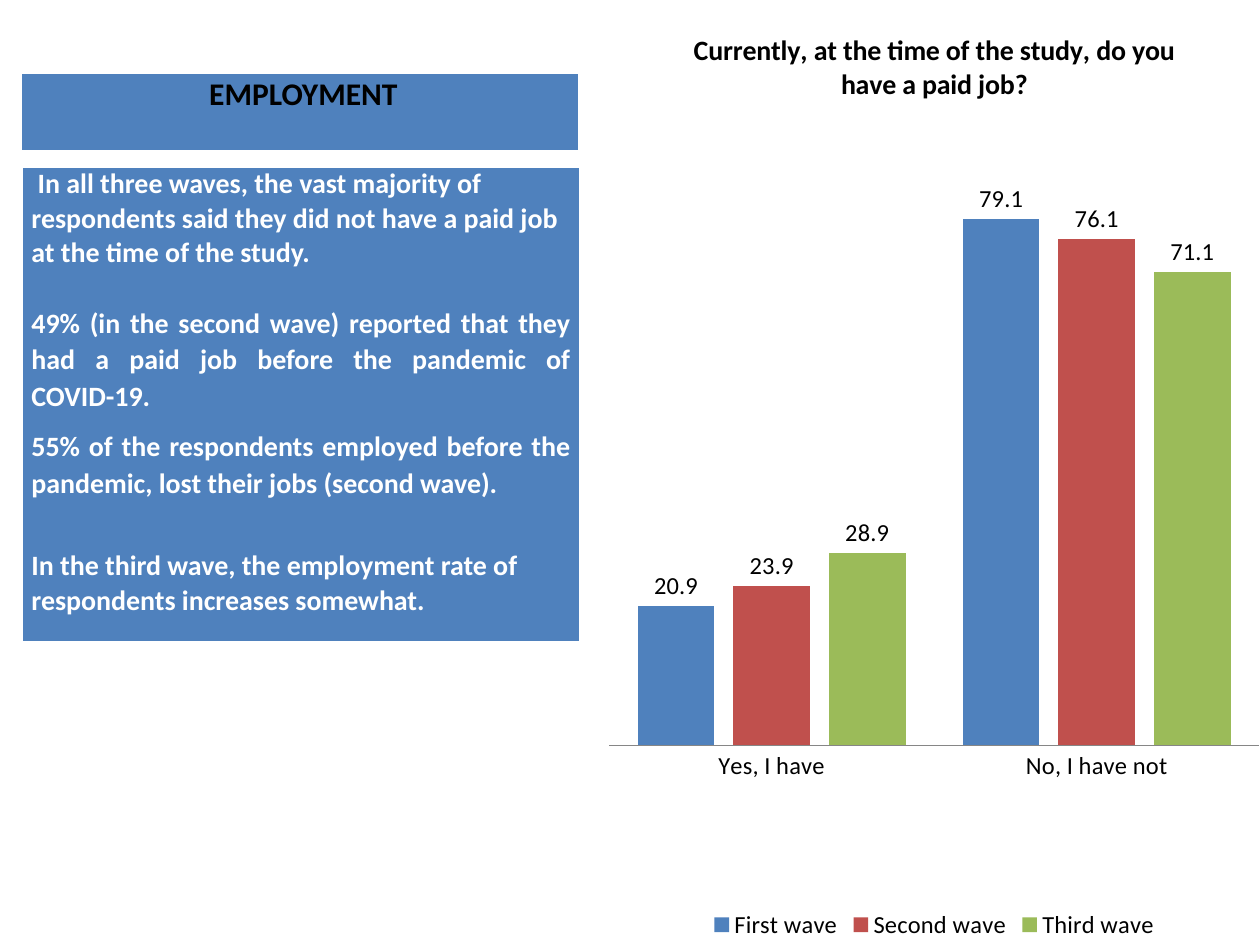
from lxml import etree
from pptx import Presentation
from pptx.chart.data import CategoryChartData
from pptx.dml.color import RGBColor
from pptx.enum.chart import XL_CHART_TYPE, XL_LABEL_POSITION, XL_LEGEND_POSITION, XL_TICK_MARK
from pptx.enum.text import PP_ALIGN
from pptx.oxml import parse_xml
from pptx.oxml.ns import nsdecls
from pptx.util import Inches, Pt

BLUE = RGBColor(0x4F, 0x81, 0xBD)
RED = RGBColor(0xC0, 0x50, 0x4D)
GREEN = RGBColor(0x9B, 0xBB, 0x59)
GRAY = RGBColor(0x86, 0x86, 0x86)
BLACK = RGBColor(0, 0, 0)
WHITE = RGBColor(0xFF, 0xFF, 0xFF)
FONT = "Calibri"
WIDTH, HEIGHT = Inches(10), Inches(7.5)

# Shares of the slide: left, top, width, height
HEADING_BOX = (0.017, 0.077, 0.442, 0.084)
FINDINGS_BOX = (0.018, 0.177, 0.442, 0.504)
CHART_BOX = (0.483, 0, 0.517, 1)

# Text, alignment, line spacing, space after in points
HEADING = [("\u00a0EMPLOYMENT".replace("\u00a0", " "), PP_ALIGN.CENTER, 1.07, 0)]
FINDINGS = [
    (" In all three waves, the vast majority of respondents said they did not "
     "have a paid job at the time of the study.", PP_ALIGN.LEFT, 1, 19.5),
    ("49% (in the second wave) reported that they had a paid job before the "
     "pandemic of COVID-19.", PP_ALIGN.JUSTIFY, 1.07, 8),
    ("55% of the respondents employed before the pandemic, lost their jobs "
     "(second wave).", PP_ALIGN.JUSTIFY, 1.07, 27.5),
    ("In the third wave, the employment rate of respondents increases somewhat.",
     PP_ALIGN.LEFT, 1, 0),
]
QUESTION = "Currently, at the time of the study, do you have a paid job?"
ANSWERS = ["Yes, I have", "No, I have not"]
WAVES = [
    ("First wave", (20.9, 79.1), BLUE),
    ("Second wave", (23.9, 76.1), RED),
    ("Third wave", (28.9, 71.1), GREEN),
]


def place(box):
    left, top, width, height = box
    return int(left * WIDTH), int(top * HEIGHT), int(width * WIDTH), int(height * HEIGHT)


def style_font(font, size, color, bold=False):
    font.name, font.size, font.bold = FONT, Pt(size), bold
    font.color.rgb = color


def add_cell_borders(cell):
    props = cell._tc.get_or_add_tcPr()
    for index, (side, points) in enumerate([("L", 1), ("R", 1), ("T", 1), ("B", 3)]):
        props.insert(index, parse_xml(
            f'<a:ln{side} {nsdecls("a")} w="{Pt(points)}"><a:solidFill>'
            f'<a:srgbClr val="{WHITE}"/></a:solidFill></a:ln{side}>'))


def add_text_panel(page, box, paragraphs, size, color):
    """Add a one-cell blue table holding the paragraphs."""
    table = page.shapes.add_table(1, 1, *place(box)).table
    cell = table.cell(0, 0)
    cell.margin_left = cell.margin_right = Inches(0.07)
    cell.margin_top = cell.margin_bottom = 0
    cell.fill.solid()
    cell.fill.fore_color.rgb = BLUE
    add_cell_borders(cell)
    frame = cell.text_frame
    frame.text = "\n".join(text for text, *_ in paragraphs)
    for para, (_, alignment, spacing, after) in zip(frame.paragraphs, paragraphs):
        para.alignment, para.line_spacing, para.space_after = alignment, spacing, Pt(after)
        for span in para.runs:
            style_font(span.font, size, color, bold=True)


def set_plot_layout(chart, x, y, w, h):
    area = chart._chartSpace.chart.plotArea
    for old in area.findall("c:layout", {"c": area.nsmap["c"]}):
        area.remove(old)
    layout = parse_xml(f'<c:layout {nsdecls("c")}><c:manualLayout/></c:layout>')
    settings = [("layoutTarget", "inner"), ("xMode", "edge"), ("yMode", "edge"),
                ("x", x), ("y", y), ("w", w), ("h", h)]
    for name, value in settings:
        etree.SubElement(layout[0], f'{{{area.nsmap["c"]}}}{name}', val=str(value))
    area.insert(0, layout)


def add_wave_chart(page, box):
    data = CategoryChartData(number_format="###0.0")
    data.categories = ANSWERS
    for name, values, _ in WAVES:
        data.add_series(name, values)
    chart = page.shapes.add_chart(XL_CHART_TYPE.COLUMN_CLUSTERED, *place(box), data).chart
    style_font(chart.font, 14, BLACK)

    chart.has_title = True
    title = chart.chart_title
    title.include_in_layout = False
    title.text_frame.text = QUESTION
    style_font(title.text_frame.paragraphs[0].runs[0].font, 16, BLACK, bold=True)

    chart.has_legend = True
    chart.legend.position = XL_LEGEND_POSITION.BOTTOM
    chart.legend.include_in_layout = False

    chart.category_axis.major_tick_mark = XL_TICK_MARK.NONE
    chart.category_axis.format.line.color.rgb = GRAY
    axis = chart.value_axis
    axis.minimum_scale, axis.maximum_scale = 0, 90
    axis.has_major_gridlines = False
    axis.visible = False

    plot = chart.plots[0]
    plot.gap_width, plot.overlap = 75, -25
    plot.vary_by_categories = False
    for series, (_, _, color) in zip(plot.series, WAVES):
        series.format.fill.solid()
        series.format.fill.fore_color.rgb = color
        labels = series.data_labels
        labels.show_value = True
        labels.position = XL_LABEL_POSITION.OUTSIDE_END
        labels.number_format = "###0.0"
        labels.number_format_is_linked = False
    set_plot_layout(chart, 0, 0.155, 1, 0.634)


def main():
    deck = Presentation()
    deck.slide_width, deck.slide_height = WIDTH, HEIGHT
    page = deck.slides.add_slide(deck.slide_layouts[6])
    add_wave_chart(page, CHART_BOX)
    add_text_panel(page, HEADING_BOX, HEADING, 18, BLACK)
    add_text_panel(page, FINDINGS_BOX, FINDINGS, 16, WHITE)
    deck.save("out.pptx")


if __name__ == "__main__":
    main()
